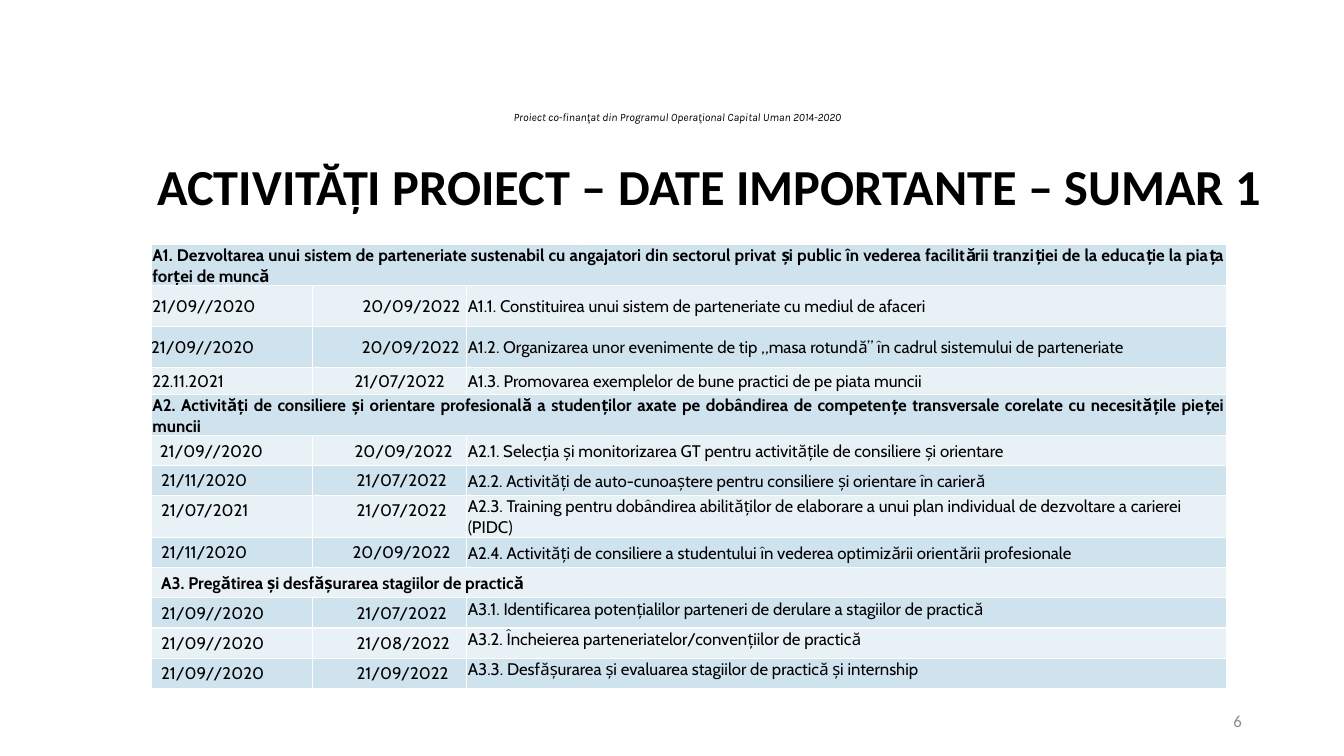
import pptx
import pptx.dml.color
import pptx.enum.text
import pptx.util

Cm = pptx.util.Cm
Pt = pptx.util.Pt
ALIGN = pptx.enum.text.PP_ALIGN
ANCHOR = pptx.enum.text.MSO_ANCHOR

COLOURS = {"text": "000000", "number": "8C8C8C", "dark band": "CEE3ED", "light band": "E8F2F6"}

FORMATS = {
    "funding": {"name": "Karla", "size": Pt(8), "italic": True},
    "title": {"name": "Calibri", "size": Pt(36), "bold": True},
    "number": {"name": "Calibri", "size": Pt(12)},
    "section": {"name": "Cabin", "size": Pt(12), "bold": True},
    "activity": {"name": "Cabin", "size": Pt(12), "bold": False},
}

COLUMN_WIDTHS = (4.06, 3.89, 19.15)
TIGHT = 0.03
INSET = 0.13

# Each section: heading, heading height, heading indent, heading alignment, date anchor,
# description anchor, and its activities as
# (row height, start date, start indent, end date, end indent, description).
SECTIONS = [
    ("A1. Dezvoltarea unui sistem de parteneriate sustenabil cu angajatori din sectorul privat și public "
     "în vederea facilitării tranziției de la educație la piața forței de muncă",
     1.03, TIGHT, ALIGN.JUSTIFY, ANCHOR.MIDDLE, ANCHOR.MIDDLE, [
         (1.03, "21/09//2020", TIGHT, "20/09/2022", 1.27,
          "A1.1. Constituirea unui sistem de parteneriate cu mediul de afaceri"),
         (1.03, "21/09//2020", 0, "20/09/2022", 1.25,
          "A1.2. Organizarea unor evenimente de tip „masa rotundă” în cadrul sistemului de parteneriate"),
         (0.68, "22.11.2021", TIGHT, "21/07/2022", 1.07,
          "A1.3. Promovarea exemplelor de bune practici de pe piata muncii"),
     ]),
    ("A2. Activități de consiliere și orientare profesională a studenților axate pe dobândirea de "
     "competențe transversale corelate cu necesitățile pieței muncii",
     1.03, TIGHT, ALIGN.JUSTIFY, ANCHOR.TOP, ANCHOR.MIDDLE, [
         (0.74, "21/09//2020", 0.22, "20/09/2022", 1.07,
          "A2.1. Selecția și monitorizarea GT pentru activitățile de consiliere și orientare"),
         (0.76, "21/11/2020", 0.25, "21/07/2022", 1.12,
          "A2.2. Activități de auto-cunoaștere pentru consiliere și orientare în carieră"),
         (1.06, "21/07/2021", 0.25, "21/07/2022", 1.12,
          "A2.3. Training pentru dobândirea abilităților de elaborare a unui plan individual de "
          "dezvoltare a carierei (PIDC)"),
         (0.76, "21/11/2020", 0.25, "20/09/2022", 1.02,
          "A2.4. Activități de consiliere a studentului în vederea optimizării orientării profesionale"),
     ]),
    ("A3. Pregătirea și desfășurarea stagiilor de practică",
     0.76, 0.25, ALIGN.LEFT, ANCHOR.TOP, ANCHOR.TOP, [
         (0.76, "21/09//2020", 0.25, "21/07/2022", 1.12,
          "A3.1. Identificarea potențialilor parteneri de derulare a stagiilor de practică"),
         (0.76, "21/09//2020", 0.25, "21/08/2022", 1.12,
          "A3.2. Încheierea parteneriatelor/convențiilor de practică"),
         (0.76, "21/09//2020", 0.25, "21/09/2022", 1.12,
          "A3.3. Desfășurarea și evaluarea stagiilor de practică și internship"),
     ]),
]


def write(frame, text, style, align, colour="text"):
    para = frame.paragraphs[0]
    para.alignment = align
    span = para.add_run()
    span.text = text
    for key, value in FORMATS[style].items():
        setattr(span.font, key, value)
    span.font.color.rgb = pptx.dml.color.RGBColor.from_string(COLOURS[colour])
    return para


def add_label(page, box, text, style, align, colour="text", wrap=True):
    frame = page.shapes.add_textbox(*map(Cm, box)).text_frame
    frame.word_wrap = wrap
    frame.vertical_anchor = ANCHOR.MIDDLE
    return write(frame, text, style, align, colour)


def fill_cell(cell, text, style, align, anchor, left, top):
    margins = {"margin_left": left, "margin_right": TIGHT, "margin_top": top, "margin_bottom": 0}
    for key, value in margins.items():
        setattr(cell, key, Cm(value))
    cell.vertical_anchor = anchor
    write(cell.text_frame, text, style, align)


def add_schedule(page, left, top):
    """Place the banded table of sections, dates and activities."""
    row_count = sum(1 + len(section[-1]) for section in SECTIONS)
    grid = page.shapes.add_table(row_count, len(COLUMN_WIDTHS), Cm(left), Cm(top),
                                 Cm(sum(COLUMN_WIDTHS)), Cm(row_count)).table
    for column, width in zip(grid.columns, COLUMN_WIDTHS):
        column.width = Cm(width)
    for index, row in enumerate(grid.rows):
        band = "light band" if index % 2 else "dark band"
        for cell in row.cells:
            cell.fill.solid()
            cell.fill.fore_color.rgb = pptx.dml.color.RGBColor.from_string(COLOURS[band])

    index = 0
    for heading, height, indent, align, date_anchor, text_anchor, activities in SECTIONS:
        date_top = INSET if date_anchor == ANCHOR.TOP else TIGHT
        grid.rows[index].height = Cm(height)
        grid.cell(index, 0).merge(grid.cell(index, 2))
        fill_cell(grid.cell(index, 0), heading, "section", align, ANCHOR.MIDDLE, indent, TIGHT)
        index += 1
        for height, start, start_left, end, end_left, description in activities:
            grid.rows[index].height = Cm(height)
            start_cell, end_cell, description_cell = grid.rows[index].cells
            fill_cell(start_cell, start, "activity", ALIGN.LEFT, date_anchor, start_left, date_top)
            fill_cell(end_cell, end, "activity", ALIGN.LEFT, date_anchor, end_left, date_top)
            fill_cell(description_cell, description, "activity", ALIGN.LEFT, text_anchor, TIGHT, TIGHT)
            index += 1


def main():
    deck = pptx.Presentation()
    deck.slide_width, deck.slide_height = Cm(33.87), Cm(19.05)
    page = deck.slides.add_slide(deck.slide_layouts[6])
    add_label(page, (12.22, 2.64, 9.73, 0.62),
              "Proiect co-finanţat din Programul Operaţional Capital Uman 2014-2020",
              "funding", ALIGN.CENTER, wrap=False)
    add_schedule(page, 3.81, 6.15)
    title = add_label(page, (3.71, 3.4, 29.21, 2.74),
                      "ACTIVITĂȚI PROIECT – DATE IMPORTANTE – SUMAR 1", "title", ALIGN.JUSTIFY)
    title.line_spacing = 0.9
    add_label(page, (23.93, 17.65, 7.62, 1.02), "6", "number", ALIGN.RIGHT, "number")
    deck.save("out.pptx")


if __name__ == "__main__":
    main()
